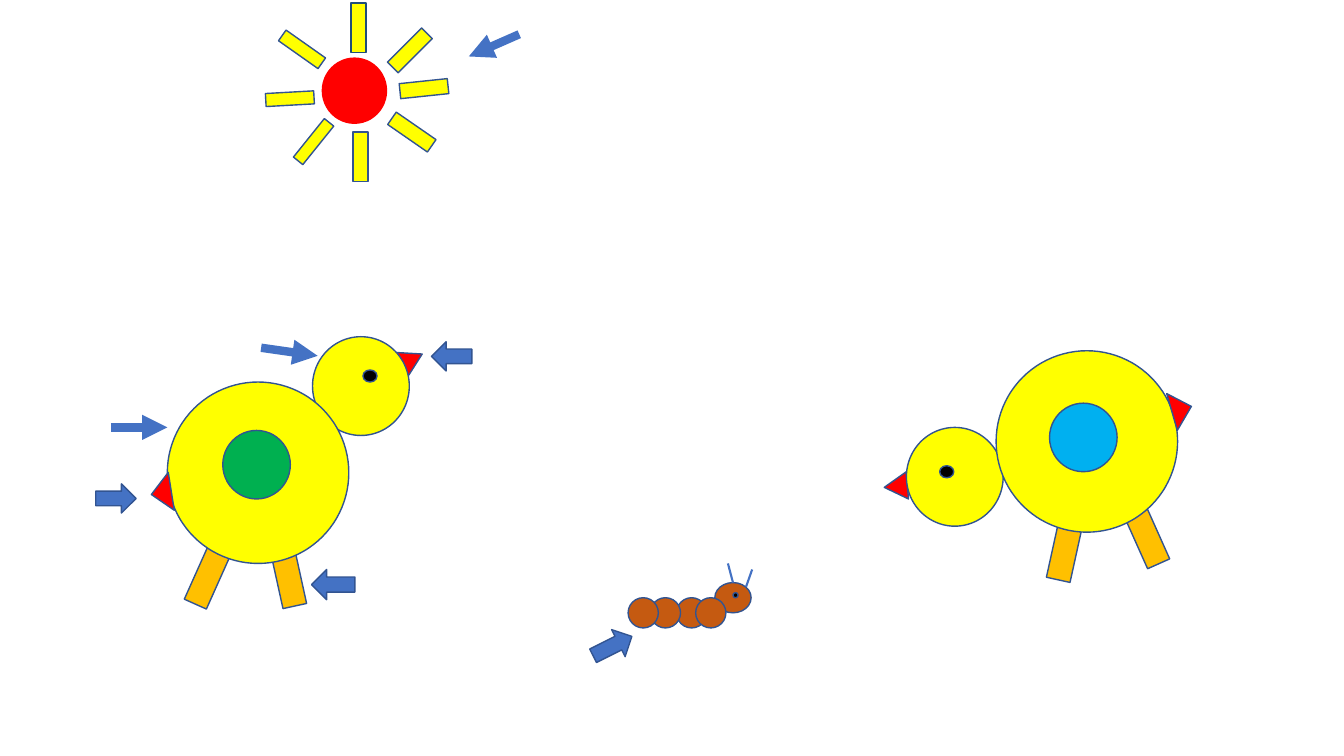
"""Draw a sun, two chicks and a caterpillar with pointing arrows."""
import pptx
import pptx.dml.color
import pptx.enum.shapes
import pptx.oxml
import pptx.oxml.ns
import pptx.util
from pptx.util import Inches

COLORS = {
    "yellow": "FFFF00", "red": "FF0000", "orange": "FFC000", "green": "00B050",
    "sky": "00B0F0", "brown": "C55A11", "black": "000000", "blue": "4472C4",
    "outline": "325491", "navy": "1F4E79",
}
SHAPE = pptx.enum.shapes.MSO_SHAPE


def rgb(name):
    return pptx.dml.color.RGBColor.from_string(COLORS[name])


class Scene:
    def __init__(self, slide):
        self.s = slide

    def shape(self, kind, x, y, w, h, fill, rot=0, line="outline"):
        sp = self.s.shapes.add_shape(kind, Inches(x), Inches(y), Inches(w), Inches(h))
        sp.shadow.inherit = False
        sp.rotation = rot
        sp.fill.solid()
        sp.fill.fore_color.rgb = rgb(fill)
        if line:
            sp.line.color.rgb = rgb(line)
            sp.line.width = pptx.util.Pt(1)
        else:
            sp.line.fill.background()

    def oval(self, x, y, w, h, fill, **fmt):
        self.shape(SHAPE.OVAL, x, y, w, h, fill, **fmt)

    def bar(self, x, y, w, h, fill, rot=0, **fmt):
        self.shape(SHAPE.RECTANGLE, x, y, w, h, fill, rot, **fmt)

    def triangle(self, x, y, w, h, rot):
        self.shape(SHAPE.ISOSCELES_TRIANGLE, x, y, w, h, "red", rot)

    def line(self, x1, y1, x2, y2, width, arrow=False):
        c = self.s.shapes.add_connector(
            pptx.enum.shapes.MSO_CONNECTOR.STRAIGHT,
            Inches(x1), Inches(y1), Inches(x2), Inches(y2))
        c.line.color.rgb = rgb("blue")
        c.line.width = pptx.util.Pt(width)
        if arrow:
            tail = pptx.oxml.parse_xml(
                f'<a:tailEnd {pptx.oxml.ns.nsdecls("a")} type="triangle"/>')
            c.line._get_or_add_ln().append(tail)
        c._element.spPr.append(pptx.oxml.parse_xml(
            f'<a:effectLst {pptx.oxml.ns.nsdecls("a")}/>'))

    def sun(self):
        self.oval(3.19, 0.57, 0.65, 0.66, "red", line=None)
        self.bar(3.48, 0.03, 0.15, 0.49, "yellow", line="navy")
        for x, y, w, h, rot in [
            (3.5, 1.31, 0.15, 0.49, 0), (4.01, 1.07, 0.15, 0.48, 304.7),
            (3.05, 1.16, 0.12, 0.49, 38.8), (3.99, 0.26, 0.15, 0.48, 45),
            (4.13, 0.64, 0.15, 0.48, 84), (2.81, 0.74, 0.13, 0.48, 86.8),
            (2.93, 0.25, 0.13, 0.48, 125.2),
        ]:
            self.bar(x, y, w, h, "yellow", rot)

    def chick(self, body, head, eye, beak, tail, legs, wing, wing_color):
        self.triangle(*beak[:2], 0.27, 0.23, beak[2])
        self.oval(*head, 0.96, 0.98, "yellow")
        for x, y, rot in legs:
            self.bar(x, y, 0.24, 0.6, "orange", rot)
        self.oval(*body, 1.8, 1.8, "yellow")
        self.oval(*eye, 0.14, 0.12, "black")
        self.triangle(*tail[:2], 0.38, 0.2, tail[2])
        self.oval(*wing, 0.67, 0.68, wing_color)

    def caterpillar(self):
        self.oval(6.71, 5.93, 0.3, 0.3, "brown")
        self.oval(7.09, 5.78, 0.36, 0.3, "brown")
        for x in (6.9, 6.45, 6.23):
            self.oval(x, 5.93, 0.3, 0.3, "brown")
        self.oval(7.27, 5.88, 0.05, 0.05, "black")
        self.line(7.27, 5.78, 7.22, 5.59, 1.5)
        self.line(7.4, 5.82, 7.46, 5.65, 1.5)

    def pointers(self):
        for ends in [(5.15, 0.34, 4.65, 0.56), (2.59, 3.45, 3.15, 3.53),
                     (1.1, 4.24, 1.66, 4.24)]:
            self.line(*ends, 6, arrow=True)
        for kind, x, y, w, h, rot in [
            (SHAPE.LEFT_ARROW, 4.28, 3.39, 0.4, 0.29, 0),
            (SHAPE.RIGHT_ARROW, 0.95, 4.8, 0.4, 0.29, 0),
            (SHAPE.LEFT_ARROW, 3.09, 5.65, 0.43, 0.3, 0),
            (SHAPE.RIGHT_ARROW, 5.86, 6.26, 0.43, 0.3, 333.4),
        ]:
            self.shape(kind, x, y, w, h, "blue", rot)


def main():
    prs = pptx.Presentation()
    prs.slide_width, prs.slide_height = Inches(13.33), Inches(7.5)
    scene = Scene(prs.slides.add_slide(prs.slide_layouts[6]))
    scene.sun()
    scene.chick(body=(1.66, 3.79), head=(3.1, 3.34), eye=(3.6, 3.67),
                beak=(3.95, 3.45, 63), tail=(1.41, 4.79, 261),
                legs=[(2.74, 5.42, 347.6), (1.94, 5.42, 24.1)],
                wing=(2.21, 4.27), wing_color="green")
    scene.chick(body=(9.88, 3.48), head=(8.99, 4.24), eye=(9.32, 4.62),
                beak=(8.75, 4.71, 265.1), tail=(11.53, 3.96, 73.9),
                legs=[(10.44, 5.16, 12.4), (11.25, 5.02, 335.9)],
                wing=(10.41, 4), wing_color="sky")
    scene.caterpillar()
    scene.pointers()
    prs.save("out.pptx")


if __name__ == "__main__":
    main()
